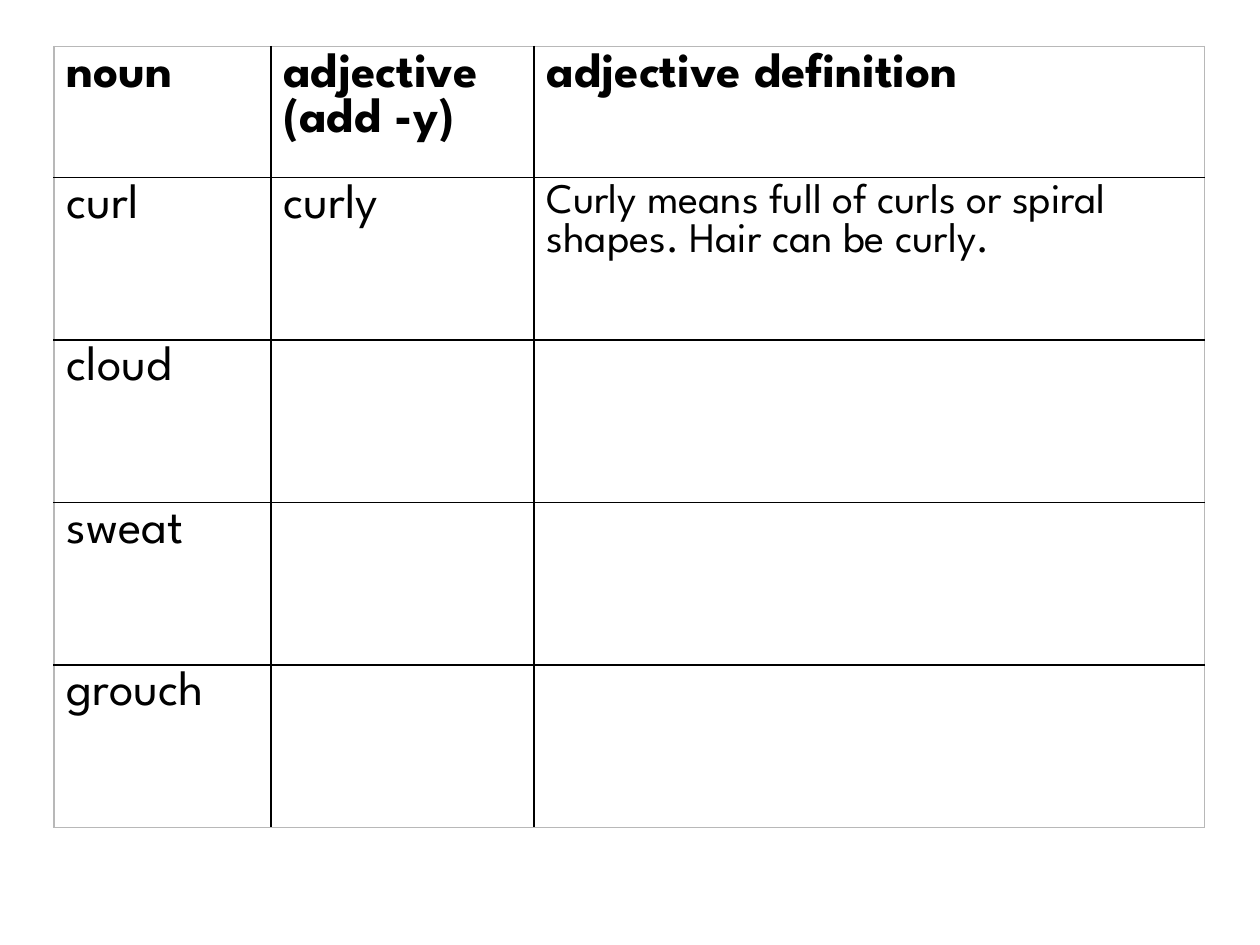
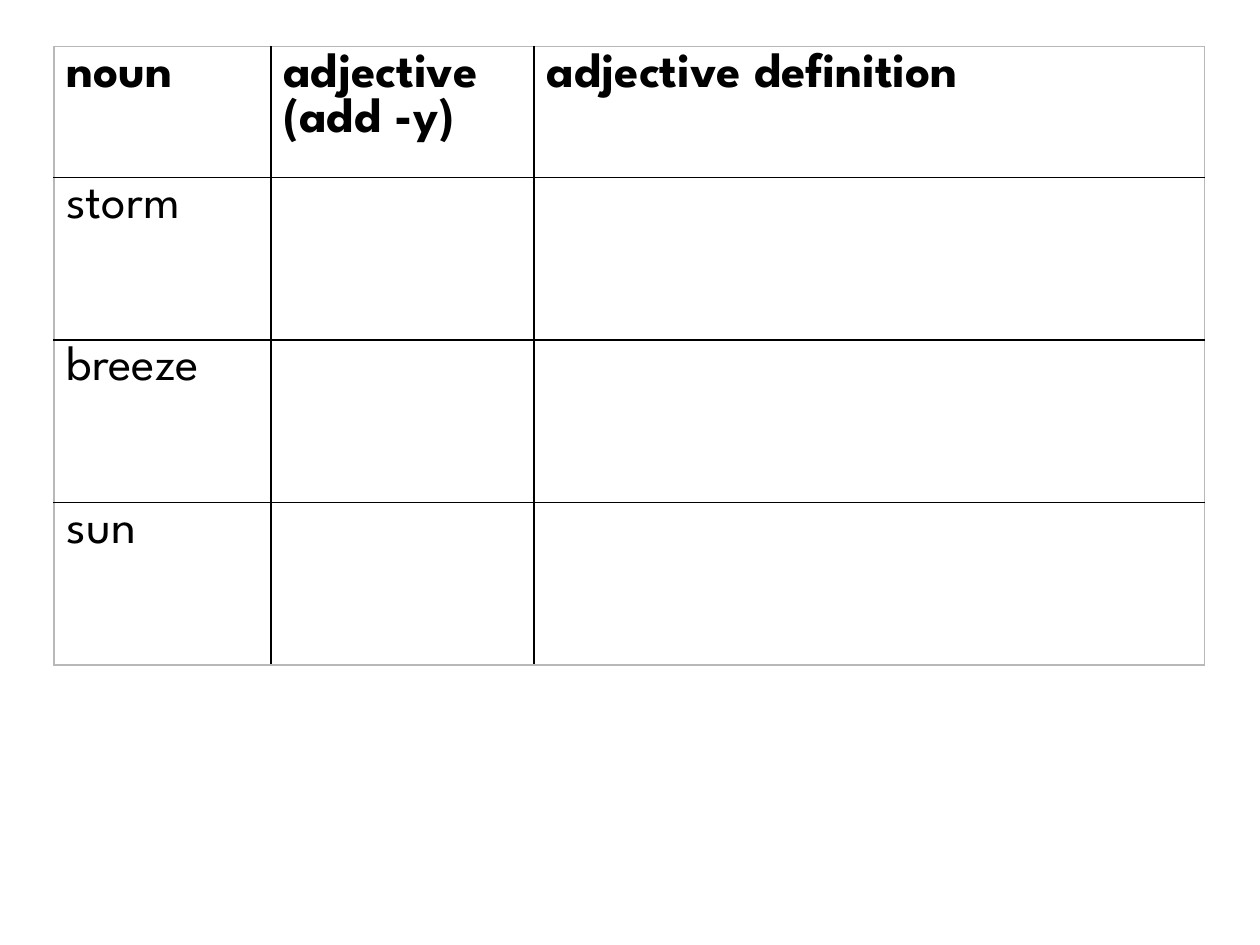
from lxml.etree import SubElement
from pptx import Presentation
from pptx.dml.color import RGBColor
from pptx.oxml.ns import qn
from pptx.util import Inches, Pt

FONT = "League Spartan"
INK = "000000"
PAPER = "FFFFFF"
FRAME = "B8B8B8"
COLUMN_WIDTHS = (1.72, 2.09, 5.32)
HEADER_HEIGHT = 1.04
WORD_HEIGHT = 1.29
TABLE_LEFT, TABLE_TOP = 0.43, 0.37
WORD_SIZE, DEFINITION_SIZE = 28, 24
HEADINGS = ("noun", "adjective (add -y)", "adjective definition")
WORD_LISTS = (
    (
        ("curl", "curly", "Curly means full of curls or spiral shapes. Hair can be curly."),
        ("cloud", "", ""),
        ("sweat", "", ""),
        ("grouch", "", ""),
    ),
    (("storm", "", ""), ("breeze", "", ""), ("sun", "", "")),
)


def rgb(hex_string):
    """Turn a hex string into a colour."""
    return RGBColor.from_string(hex_string)


def rule_cell(cell, edge_colors):
    """Draw one-point rules on the left, right, top and bottom of a cell."""
    properties = cell._tc.get_or_add_tcPr()
    for position, (side, color) in enumerate(zip("LRTB", edge_colors)):
        rule = SubElement(properties, qn(f"a:ln{side}"), w=str(Pt(1)))
        SubElement(SubElement(rule, qn("a:solidFill")), qn("a:srgbClr"), val=color)
        properties.insert(position, rule)


def write_cell(cell, wording, size, bold):
    """Fill a cell with plain wording on paper."""
    cell.fill.solid()
    cell.fill.fore_color.rgb = rgb(PAPER)
    paragraph = cell.text_frame.paragraphs[0]
    paragraph.text = wording
    paragraph.font.size = Pt(size)
    for run in paragraph.runs:
        run.font.name = FONT
        run.font.size = Pt(size)
        run.font.bold = bold
        run.font.color.rgb = rgb(INK)


def add_word_table(slide, words):
    """Add a noun-to-adjective worksheet table under the shared headings."""
    entries = (HEADINGS, *words)
    heights = [HEADER_HEIGHT] + [WORD_HEIGHT] * len(words)
    last_row, last_column = len(entries) - 1, len(HEADINGS) - 1
    table = slide.shapes.add_table(
        len(entries), len(HEADINGS), Inches(TABLE_LEFT), Inches(TABLE_TOP),
        Inches(sum(COLUMN_WIDTHS)), Inches(sum(heights)),
    ).table
    table.horz_banding = False
    for column, width in zip(table.columns, COLUMN_WIDTHS):
        column.width = Inches(width)
    for r, (entry, height) in enumerate(zip(entries, heights)):
        table.rows[r].height = Inches(height)
        for c, wording in enumerate(entry):
            is_definition = r > 0 and c == last_column
            size = DEFINITION_SIZE if is_definition else WORD_SIZE
            write_cell(table.cell(r, c), wording, size, bold=r == 0)
            on_frame = (c == 0, c == last_column, r == 0, r == last_row)
            rule_cell(table.cell(r, c), [FRAME if outer else INK for outer in on_frame])


def main():
    """Build one worksheet slide for each word list."""
    presentation = Presentation()
    presentation.slide_width, presentation.slide_height = Inches(10), Inches(7.5)
    blank = presentation.slide_layouts[6]
    for words in WORD_LISTS:
        add_word_table(presentation.slides.add_slide(blank), words)
    presentation.save("out.pptx")


if __name__ == "__main__":
    main()
